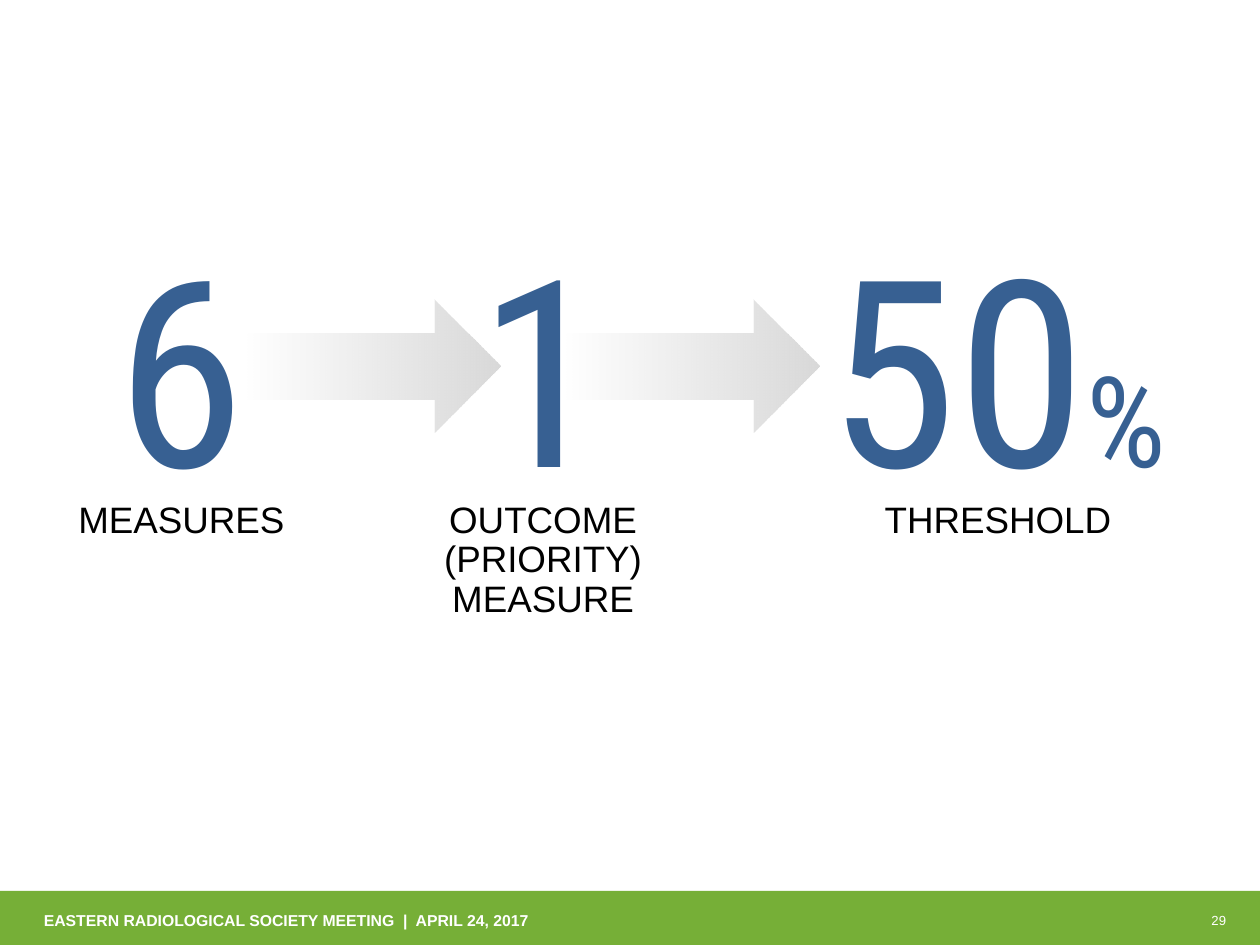
import dataclasses

import lxml.etree
import pptx
import pptx.dml.color
import pptx.enum.shapes
import pptx.enum.text
import pptx.oxml.ns
import pptx.util

SHAPE = pptx.enum.shapes.MSO_SHAPE
ALIGN = pptx.enum.text.PP_ALIGN
ANCHOR = pptx.enum.text.MSO_ANCHOR
FIT = pptx.enum.text.MSO_AUTO_SIZE
COLS, ROWS = 100, 75


@dataclasses.dataclass(frozen=True)
class Theme:
    """Colours, fonts and type sizes of the slide."""
    green: str = "76AF37"
    blue: str = "376092"
    grey: str = "D9D9D9"
    black: str = "000000"
    white: str = "FFFFFF"
    plain: str = "Arial"
    narrow: str = "Roboto Condensed"
    huge: float = 149.2
    unit: float = 72
    label: float = 21
    foot: float = 9
    page: float = 7.5


def color(code):
    """Turn a hex code into a colour."""
    return pptx.dml.color.RGBColor.from_string(code)


def write(frame, text, font, size, tint, bold=False, align=ALIGN.CENTER, line=None):
    """Add a formatted run to the first paragraph of a frame."""
    para = frame.paragraphs[0]
    para.alignment = align
    if line:
        para.line_spacing = line
    run = para.add_run()
    run.text = text
    run.font.name = font
    run.font.size = pptx.util.Pt(size)
    run.font.bold = bold
    run.font.color.rgb = color(tint)


class Board:
    """Draws elements on one slide by columns and rows."""

    def __init__(self, deck, theme):
        """Keep the style and open a blank slide."""
        self.theme = theme
        self.cell = deck.slide_width / COLS, deck.slide_height / ROWS
        self.slide = deck.slides.add_slide(deck.slide_layouts[6])

    def place(self, col, row, wide, high):
        """Turn grid cells into slide lengths."""
        across, down = self.cell
        return int(col * across), int(row * down), int(wide * across), int(high * down)

    def shape(self, kind, *area):
        """Add a preset shape without line or shadow."""
        item = self.slide.shapes.add_shape(kind, *self.place(*area))
        item.shadow.inherit = False
        item.line.fill.background()
        return item

    def band(self, *area):
        """Add the solid footer band."""
        fill = self.shape(SHAPE.RECTANGLE, *area).fill
        fill.solid()
        fill.fore_color.rgb = color(self.theme.green)

    def arrow(self, *area):
        """Add an arrow that fades in from the left."""
        item = self.shape(SHAPE.RIGHT_ARROW, *area)
        item.fill.gradient()
        item.fill.gradient_angle = 0
        for stop in item.fill.gradient_stops:
            stop.color.rgb = color(self.theme.grey)
        first = item.element.spPr.xpath(".//a:gs/a:srgbClr")[0]
        lxml.etree.SubElement(first, pptx.oxml.ns.qn("a:alpha"), val="0")

    def box(self, *area, wrap=True, anchor=ANCHOR.TOP):
        """Add an empty text box and return its frame."""
        frame = self.slide.shapes.add_textbox(*self.place(*area)).text_frame
        frame.word_wrap = wrap
        frame.vertical_anchor = anchor
        return frame

    def figure(self, text, *area, unit=""):
        """Add a huge number with an optional smaller unit."""
        look = self.theme
        frame = self.box(*area, wrap=False)
        frame.auto_size = FIT.SHAPE_TO_FIT_TEXT
        write(frame, text, look.narrow, look.huge, look.blue)
        if unit:
            write(frame, unit, look.narrow, look.unit, look.blue)

    def label(self, text, *area):
        """Add a caption below a number."""
        look = self.theme
        frame = self.box(*area)
        frame.margin_left = frame.margin_right = pptx.util.Inches(0.07)
        frame.margin_top = frame.margin_bottom = pptx.util.Inches(0.04)
        write(frame, text, look.plain, look.label, look.black, line=0.9)

    def footer(self, text, *area, **form):
        """Add white text on the footer band."""
        frame = self.box(*area, anchor=ANCHOR.MIDDLE)
        write(frame, text, self.theme.plain, tint=self.theme.white, **form)


def main():
    """Build and save the slide."""
    deck = pptx.Presentation()
    deck.slide_width = pptx.util.Inches(10)
    deck.slide_height = pptx.util.Inches(7.5)
    theme = Theme()
    board = Board(deck, theme)
    board.band(0, 70.7, COLS, 4.3)
    for col in (19.6, 44.9):
        board.arrow(col, 23.8, 20.1, 10.5)
    for text, unit, col, wide in (
        ("6", "", 7.7, 13.4), ("1", "", 37, 10), ("50", "%", 63.4, 31.5),
    ):
        board.figure(text, col, 15.9, wide, 26.1, unit=unit)
    for text, col, wide in (
        ("MEASURES", 5, 18.8),
        ("OUTCOME (PRIORITY) MEASURE", 33.7, 18.8),
        ("THRESHOLD", 69.2, 20),
    ):
        board.label(text, col, 39.4, wide, 14.3)
    board.footer("29", 84.8, 71, 13.5, 4, size=theme.page, align=ALIGN.RIGHT)
    board.footer("EASTERN RADIOLOGICAL SOCIETY MEETING  |  APRIL 24, 2017",
                 2.5, 71, 86.7, 4, size=theme.foot, bold=True, align=ALIGN.LEFT)
    deck.save("out.pptx")


if __name__ == "__main__":
    main()
